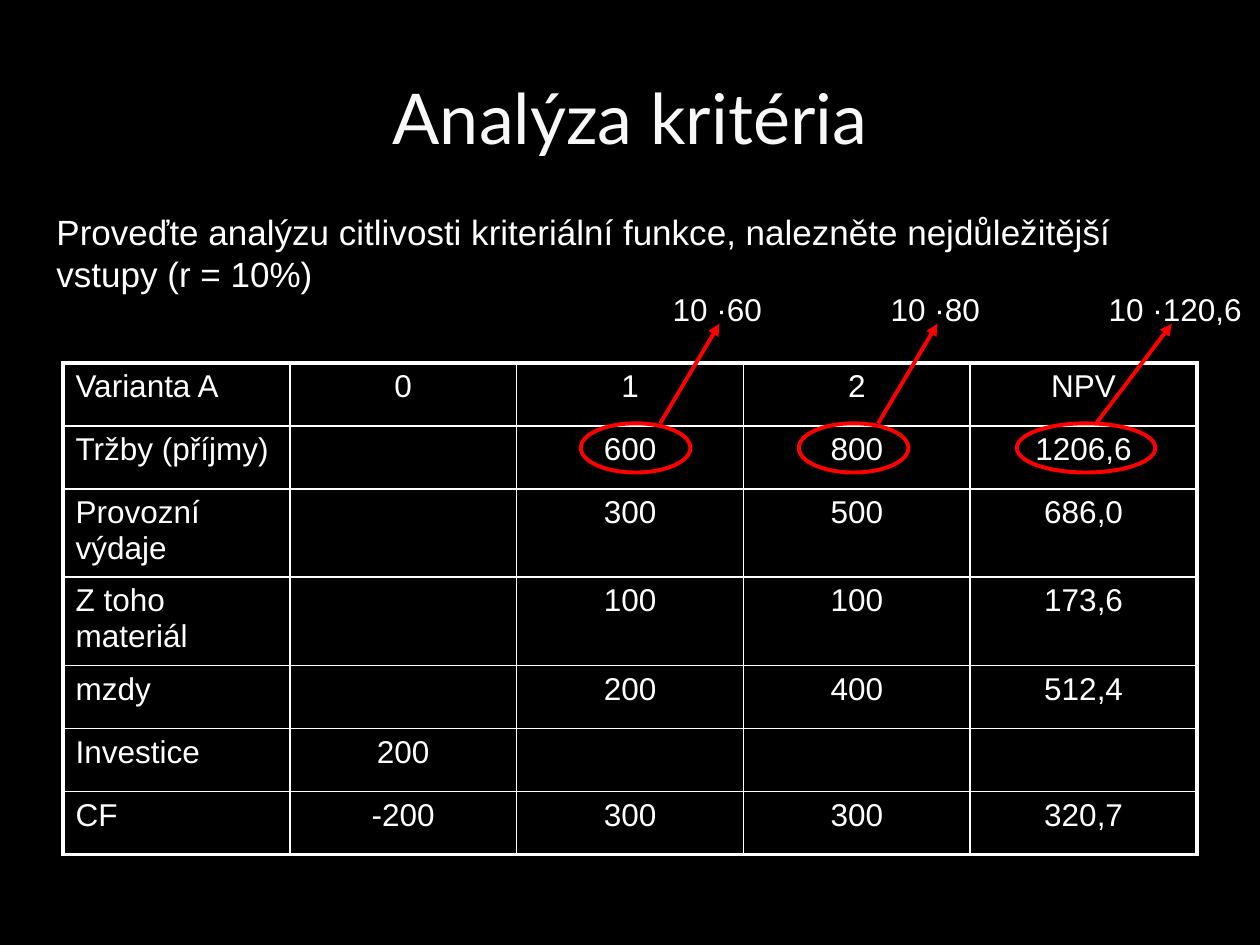
import pptx
import pptx.dml.color
import pptx.enum.shapes
import pptx.enum.text
import pptx.oxml.ns
import pptx.util
from lxml import etree

Inches, Pt = pptx.util.Inches, pptx.util.Pt
ALIGN = pptx.enum.text.PP_ALIGN
ANCHOR = pptx.enum.text.MSO_ANCHOR
WHITE, RED, BLACK = "FFFFFF", "FF0000", "000000"

# Content
TITLE = "Analýza kritéria"
TASK = ("Proveďte analýzu citlivosti kriteriální funkce, "
        "nalezněte nejdůležitější vstupy (r = 10%)")
ROWS = [
    ("Varianta A", "0", "1", "2", "NPV"),
    ("Tržby (příjmy)", "", "600", "800", "1206,6"),
    ("Provozní výdaje", "", "300", "500", "686,0"),
    ("Z toho materiál", "", "100", "100", "173,6"),
    ("mzdy", "", "200", "400", "512,4"),
    ("Investice", "200", "", "", ""),
    ("CF", "-200", "300", "300", "320,7"),
]
# Label, label width, ellipse width, horizontal run of the arrow
CHANGES = [
    ("10 ·60", 1.02, 0.87, 0.47),
    ("10 ·80", 1.02, 0.87, 0.47),
    ("10 ·120,6", 1.3, 1.1, 0.6),
]
COL_W, ROW_H = 1.8, 0.5
CHANGE_LEFT, CHANGE_STEP = 4.61, 1.73


def color(value):
    return pptx.dml.color.RGBColor.from_string(value)


def write(tf, text, size=18, font="Arial", fill=WHITE, align=ALIGN.LEFT):
    p = tf.paragraphs[0]
    p.alignment = align
    r = p.add_run()
    r.text = text
    r.font.size = Pt(size)
    r.font.name = font
    r.font.color.rgb = color(fill)


def add_text(s, text, x, y, w, h, anchor=ANCHOR.TOP, **fmt):
    tf = s.shapes.add_textbox(Inches(x), Inches(y), Inches(w), Inches(h)).text_frame
    tf.word_wrap = True
    tf.vertical_anchor = anchor
    write(tf, text, **fmt)


def sub(parent, tag, **attrs):
    return etree.SubElement(parent, pptx.oxml.ns.qn(tag), **attrs)


def set_border(cell, side, width):
    ln = sub(cell._tc.get_or_add_tcPr(), "a:ln" + side, w=str(Pt(width)))
    sub(sub(ln, "a:solidFill"), "a:srgbClr", val=WHITE)


def red_line(line):
    line.color.rgb = color(RED)
    line.width = Pt(2.25)


prs = pptx.Presentation()
prs.slide_width, prs.slide_height = Inches(10), Inches(7.5)
s = prs.slides.add_slide(prs.slide_layouts[6])
s.background.fill.solid()
s.background.fill.fore_color.rgb = color(BLACK)

# Title
add_text(s, TITLE, 0.5, 0.3, 9, 1.25, anchor=ANCHOR.MIDDLE,
         size=40, font="Lato", fill="F8F8F8", align=ALIGN.CENTER)

# Table with a heavier outer frame
n_rows, n_cols = len(ROWS), len(ROWS[0])
table = s.shapes.add_table(n_rows, n_cols, Inches(0.5), Inches(2.88),
                           Inches(COL_W * n_cols), Inches(ROW_H * n_rows)).table
table.first_row = table.horz_banding = False
for i, row in enumerate(ROWS):
    table.rows[i].height = Inches(ROW_H)
    for j, text in enumerate(row):
        cell = table.cell(i, j)
        outer = {"L": j == 0, "R": j == n_cols - 1,
                 "T": i == 0, "B": i == n_rows - 1}
        for side, heavy in outer.items():
            set_border(cell, side, 2.25 if heavy else 1)
        cell.fill.background()
        if text:
            write(cell.text_frame, text, align=ALIGN.CENTER if j else ALIGN.LEFT)

# Task
add_text(s, TASK, 0.35, 1.62, 9.06, 0.77, size=20)

# Circled values, each with an arrow to its change
for i, (label, label_w, ellipse_w, run) in enumerate(CHANGES):
    x = CHANGE_LEFT + i * CHANGE_STEP
    start = x + 0.63
    sp = s.shapes.add_shape(pptx.enum.shapes.MSO_SHAPE.OVAL, Inches(x), Inches(3.36),
                            Inches(ellipse_w), Inches(0.39))
    sp.shadow.inherit = False
    sp.fill.background()
    red_line(sp.line)

    arrow = s.shapes.add_connector(pptx.enum.shapes.MSO_CONNECTOR.STRAIGHT,
                                   Inches(start), Inches(3.36),
                                   Inches(start + run), Inches(2.57))
    red_line(arrow.line)
    sub(arrow.line._get_or_add_ln(), "a:tailEnd", type="triangle")
    sub(arrow._element.spPr, "a:effectLst")

    add_text(s, label, start, 2.25, label_w, 0.4)

prs.save("out.pptx")
